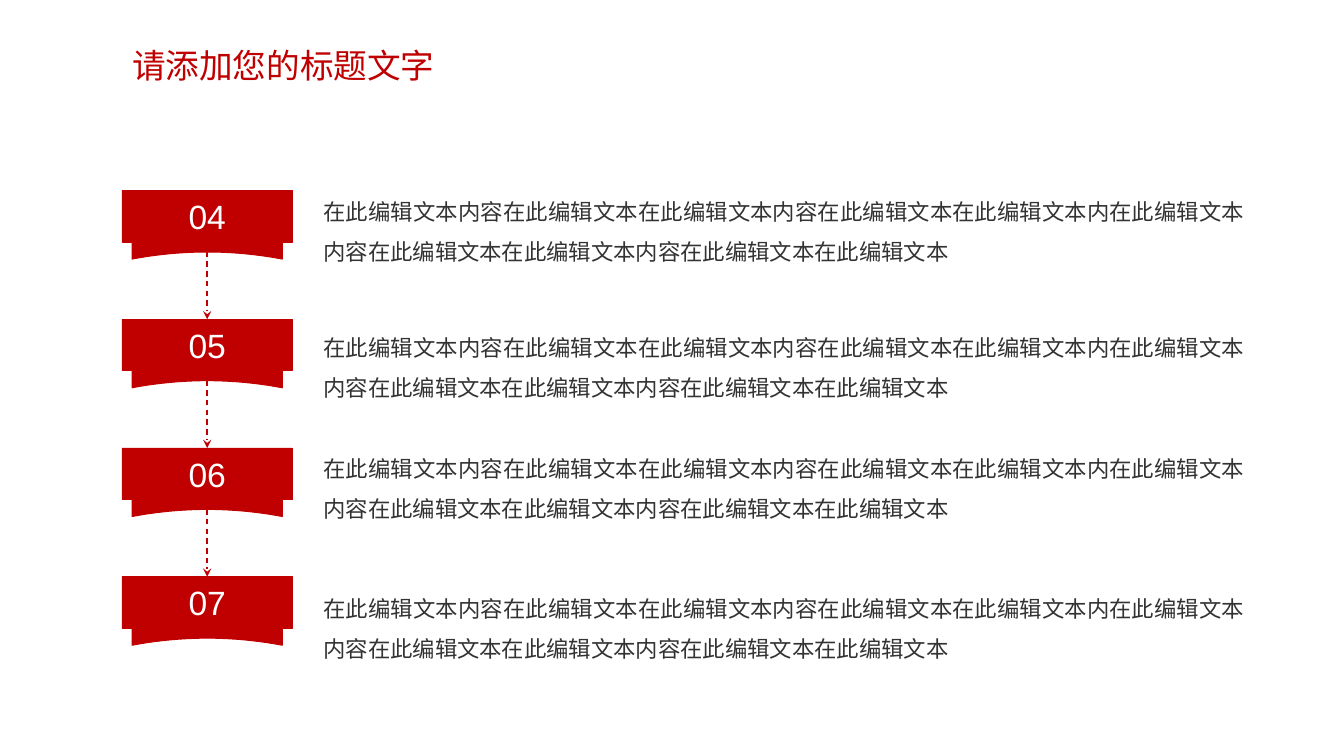
"""Build a slide with four numbered ribbons in a chain, each beside a paragraph."""
from lxml import etree
from pptx import Presentation
from pptx.dml.color import RGBColor
from pptx.enum.dml import MSO_LINE
from pptx.enum.shapes import MSO_CONNECTOR, MSO_SHAPE
from pptx.enum.text import MSO_ANCHOR, MSO_AUTO_SIZE, PP_ALIGN
from pptx.oxml.ns import qn
from pptx.util import Inches, Pt

RECTANGLE = MSO_SHAPE.RECTANGLE
STRAIGHT = MSO_CONNECTOR.STRAIGHT
DASH = MSO_LINE.DASH
TOP, MIDDLE = MSO_ANCHOR.TOP, MSO_ANCHOR.MIDDLE
LEFT, CENTER, JUSTIFY = PP_ALIGN.LEFT, PP_ALIGN.CENTER, PP_ALIGN.JUSTIFY
FIXED = MSO_AUTO_SIZE.NONE

COLORS = {name: RGBColor.from_string(value) for name, value in {
    "red": "C00000", "white": "FFFFFF", "text": "333333"}.items()}

LABEL_LEFT, LABEL_WIDTH, LABEL_HEIGHT = 1.21, 1.69, 0.51
FIRST_TOP, ROW_STEP = 1.89, 1.277
CENTER_X = LABEL_LEFT + LABEL_WIDTH / 2
FOLD_HALF, FOLD_TOP, FOLD_SHOULDER, FOLD_BOTTOM = 0.745, 0.43, 0.49, 0.68
ARCH_RISE, ARCH_STEPS = 0.07, 20
BODY_LEFT, BODY_WIDTH, BODY_HEIGHT = 3.11, 9.34, 0.91

BODY = ("在此编辑文本内容在此编辑文本在此编辑文本内容在此编辑文本在此编辑文本内"
        "在此编辑文本内容在此编辑文本在此编辑文本内容在此编辑文本在此编辑文本")
STEPS = [("04", 1.78), ("05", 3.13), ("06", 4.33), ("07", 5.72)]


def write(shape, text, size, color, align, anchor, wrap=True):
    frame = shape.text_frame
    frame.auto_size = FIXED
    frame.word_wrap = wrap
    frame.vertical_anchor = anchor
    paragraph = frame.paragraphs[0]
    paragraph.text = text
    paragraph.alignment = align
    paragraph.font.name = "Arial"
    paragraph.font.size = Pt(size)
    paragraph.font.color.rgb = COLORS[color]
    return paragraph


def paint_red(shape, line_width):
    shape.shadow.inherit = False
    shape.fill.solid()
    shape.fill.fore_color.rgb = COLORS["red"]
    shape.line.color.rgb = COLORS["red"]
    shape.line.width = Pt(line_width)


deck = Presentation()
deck.slide_width, deck.slide_height = Inches(13.33), Inches(7.5)
slide = deck.slides.add_slide(deck.slide_layouts[5])
shapes = slide.shapes

heading = shapes.title
heading.left, heading.top = Inches(LABEL_LEFT), Inches(0.4)
heading.width, heading.height = Inches(6.21), Inches(0.5)
write(heading, "请添加您的标题文字", 24, "red", LEFT, TOP)

for row, (number, body_top) in enumerate(STEPS):
    top = FIRST_TOP + row * ROW_STEP

    outline = [(CENTER_X - FOLD_HALF, top + FOLD_SHOULDER),
               (CENTER_X, top + FOLD_TOP),
               (CENTER_X + FOLD_HALF, top + FOLD_SHOULDER)]
    for step in range(ARCH_STEPS + 1):
        share = 1 - 2 * step / ARCH_STEPS
        outline.append((CENTER_X + share * FOLD_HALF,
                        top + FOLD_BOTTOM - ARCH_RISE * (1 - share ** 2)))
    points = [(Inches(x), Inches(y)) for x, y in outline]
    builder = shapes.build_freeform(*points[0])
    builder.add_line_segments(points[1:], close=True)
    paint_red(builder.convert_to_shape(), 0)

    label = shapes.add_shape(RECTANGLE, Inches(LABEL_LEFT), Inches(top),
                             Inches(LABEL_WIDTH), Inches(LABEL_HEIGHT))
    paint_red(label, 0.5)
    write(label, number, 24, "white", CENTER, MIDDLE, wrap=False)

    body = shapes.add_textbox(Inches(BODY_LEFT), Inches(body_top),
                              Inches(BODY_WIDTH), Inches(BODY_HEIGHT))
    write(body, BODY, 16, "text", JUSTIFY, TOP).line_spacing = 1.5

for row in range(len(STEPS) - 1):
    top = FIRST_TOP + row * ROW_STEP
    arrow = shapes.add_connector(STRAIGHT, Inches(CENTER_X), Inches(top + LABEL_HEIGHT),
                                 Inches(CENTER_X), Inches(top + ROW_STEP))
    arrow.line.color.rgb = COLORS["red"]
    arrow.line.width = Pt(1)
    arrow.line.dash_style = DASH
    etree.SubElement(arrow.line._get_or_add_ln(), qn("a:tailEnd"), type="stealth")
    etree.SubElement(arrow._element.spPr, qn("a:effectLst"))

deck.save("out.pptx")
